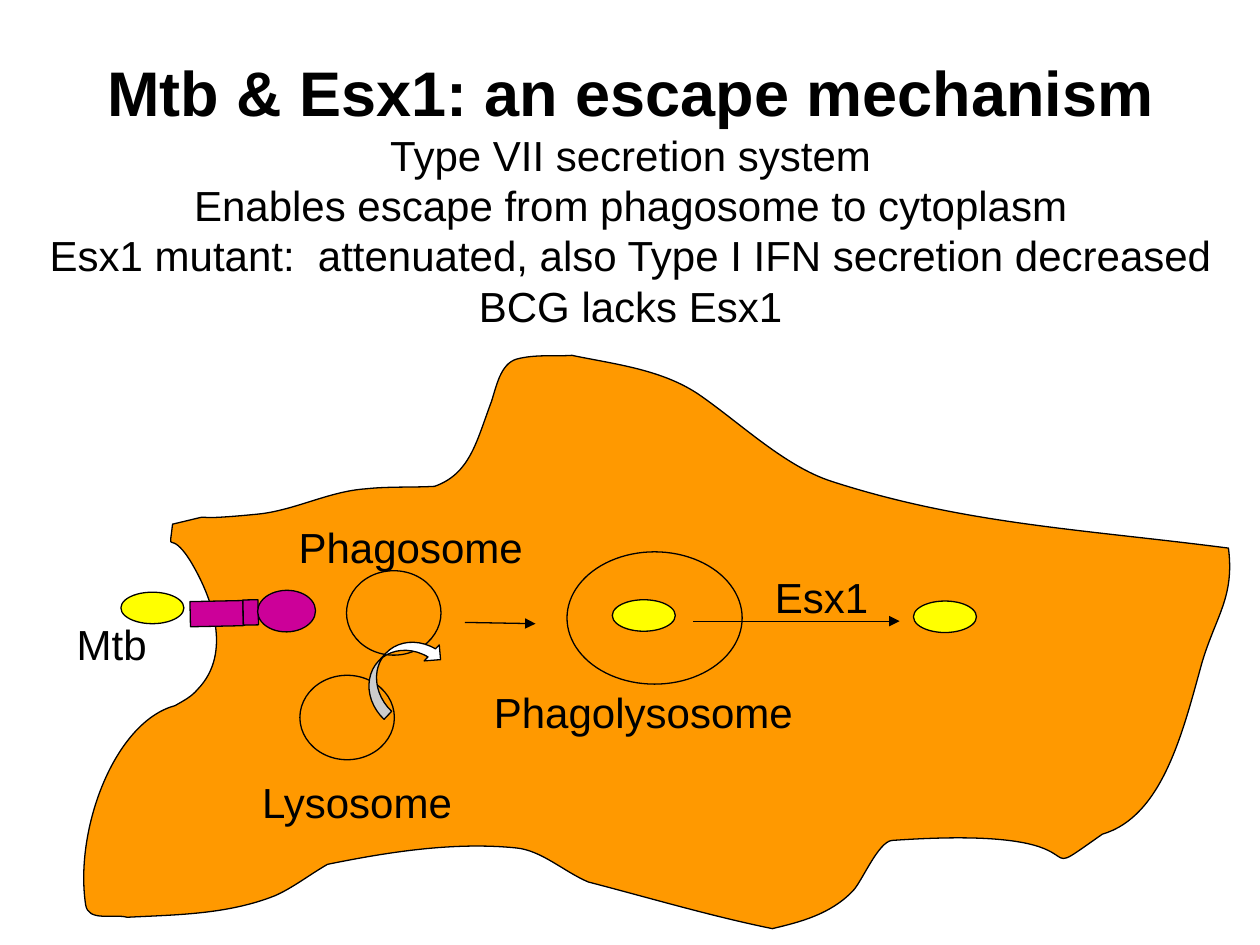
from lxml import etree
from pptx import Presentation
from pptx.dml.color import RGBColor
from pptx.enum.shapes import MSO_CONNECTOR, MSO_SHAPE
from pptx.enum.text import MSO_ANCHOR, MSO_AUTO_SIZE, PP_ALIGN
from pptx.oxml.ns import qn
from pptx.util import Inches, Pt

OVAL = MSO_SHAPE.OVAL
RECTANGLE = MSO_SHAPE.RECTANGLE
CURVED_ARROW = MSO_SHAPE.CURVED_RIGHT_ARROW
STRAIGHT = MSO_CONNECTOR.STRAIGHT
CENTER = PP_ALIGN.CENTER
MIDDLE = MSO_ANCHOR.MIDDLE
NO_AUTOFIT = MSO_AUTO_SIZE.NONE

FONT = "Arial"
COLORS = {
    "ink": "000000",
    "cell": "FF9900",
    "receptor": "CC0099",
    "bacterium": "FFFF00",
    "arrow": "FFFFFF",
}
LINE_WIDTH = Pt(0.75)
LABEL_INDENT = 0.37
BACTERIUM_SIZE = (0.5, 0.25)
VESICLE_SIZE = (0.75, 0.67)
RECEPTOR_ANGLE = 268.8

TITLE = "Mtb & Esx1: an escape mechanism"
SUBTITLES = [
    "Type VII secretion system",
    "Enables escape from phagosome to cytoplasm",
    "Esx1 mutant:  attenuated, also Type I IFN secretion decreased",
    "BCG lacks Esx1",
]

# Membrane outline relative to the cell's box: a start point, then
# Bezier segments (control, control, end).
CELL_START = (0.69, 1.35)
CELL_CURVES = [
    ((1.16, 1.24), (0.66, 1.34), (1.37, 1.27)),
    ((1.66, 1.24), (1.93, 1.09), (2.22, 1.07)),
    ((2.40, 1.05), (2.58, 1.06), (2.77, 1.05)),
    ((3.05, 0.95), (3.10, 0.70), (3.22, 0.38)),
    ((3.26, 0.26), (3.29, 0.08), (3.42, 0.04)),
    ((3.57, 0.00), (3.72, 0.02), (3.86, 0.01)),
    ((4.19, 0.08), (4.58, 0.12), (4.88, 0.33)),
    ((5.21, 0.56), (5.55, 0.89), (5.92, 1.01)),
    ((6.97, 1.35), (7.91, 1.39), (9.07, 1.54)),
    ((9.12, 1.93), (8.97, 2.08), (8.86, 2.45)),
    ((8.71, 2.99), (8.55, 3.67), (8.07, 3.81)),
    ((7.40, 4.28), (8.26, 3.73), (6.40, 3.86)),
    ((6.29, 3.87), (6.16, 4.19), (6.09, 4.26)),
    ((5.91, 4.45), (5.66, 4.51), (5.45, 4.56)),
    ((4.96, 4.46), (4.49, 4.32), (3.99, 4.19)),
    ((3.80, 4.11), (3.62, 3.94), (3.42, 3.92)),
    ((2.93, 3.87), (2.41, 3.95), (1.92, 4.05)),
    ((1.78, 4.13), (1.64, 4.24), (1.50, 4.30)),
    ((1.12, 4.45), (0.71, 4.45), (0.33, 4.47)),
    ((0.22, 4.44), (0.02, 4.51), (0.00, 4.37)),
    ((-0.09, 3.77), (0.23, 2.92), (0.71, 2.79)),
    ((0.78, 2.75), (0.84, 2.72), (0.89, 2.66)),
    ((1.17, 2.37), (1.00, 1.92), (0.83, 1.64)),
    ((0.66, 1.37), (0.66, 1.62), (0.69, 1.35)),
]


def rgb(name):
    return RGBColor.from_string(COLORS[name])


def style_shape(shape, fill):
    shape.shadow.inherit = False
    if fill:
        shape.fill.solid()
        shape.fill.fore_color.rgb = rgb(fill)
    else:
        shape.fill.background()
    shape.line.color.rgb = rgb("ink")
    shape.line.width = LINE_WIDTH


def add_preset(slide, kind, left, top, size, fill=None, rotation=0):
    shape = slide.shapes.add_shape(
        kind, Inches(left), Inches(top), Inches(size[0]), Inches(size[1]))
    style_shape(shape, fill)
    shape.rotation = rotation
    return shape


def style_paragraph(paragraph, size, bold=False):
    font = paragraph.font
    font.name, font.size, font.bold = FONT, Pt(size), bold
    font.color.rgb = rgb("ink")


def add_label(slide, text, left, top, width, indent=LABEL_INDENT):
    box = slide.shapes.add_textbox(
        Inches(left), Inches(top), Inches(width), Inches(0.5))
    frame = box.text_frame
    frame.word_wrap = True
    frame.margin_left = Inches(0.1 + indent)
    frame.text = text
    style_paragraph(frame.paragraphs[0], 24)


def add_arrow(slide, start, end):
    arrow = slide.shapes.add_connector(
        STRAIGHT, *(Inches(value) for value in start + end))
    arrow.line.color.rgb = rgb("ink")
    arrow.line.width = LINE_WIDTH
    line = arrow._element.spPr.find(qn("a:ln"))
    etree.SubElement(line, qn("a:tailEnd"), type="triangle")
    etree.SubElement(arrow._element.spPr, qn("a:effectLst"))


def add_bacterium(slide, left, top):
    add_preset(slide, OVAL, left, top, BACTERIUM_SIZE, "bacterium")


def add_heading(slide, left, top, width, height):
    title = slide.shapes.title
    title.left, title.top = Inches(left), Inches(top)
    title.width, title.height = Inches(width), Inches(height)
    frame = title.text_frame
    frame.text = "\n".join([TITLE] + SUBTITLES)
    frame.word_wrap = True
    frame.auto_size = NO_AUTOFIT
    frame.vertical_anchor = MIDDLE
    for index, paragraph in enumerate(frame.paragraphs):
        paragraph.alignment = CENTER
        style_paragraph(paragraph, 24 if index else 36, bold=index == 0)


def add_cell(slide, left, top):
    """Freeform through the segment ends, with each side bent into a Bezier."""
    def place(point):
        return Inches(left + point[0]), Inches(top + point[1])

    builder = slide.shapes.build_freeform(*place(CELL_START))
    builder.add_line_segments([place(curve[-1]) for curve in CELL_CURVES], close=True)
    cell = builder.convert_to_shape()
    style_shape(cell, "cell")
    sides = list(cell._element.iter(qn("a:lnTo")))
    for side, curve in zip(sides, CELL_CURVES):
        bezier = etree.Element(qn("a:cubicBezTo"))
        for x, y in map(place, curve):
            etree.SubElement(bezier, qn("a:pt"), x=str(x - cell.left), y=str(y - cell.top))
        side.getparent().replace(side, bezier)


def add_uptake(slide, left, top):
    """Mtb meeting the receptor at the cell membrane."""
    for kind, x, y, size in (
        (RECTANGLE, 1.11, 0.04, (0.2, 0.42)),
        (RECTANGLE, 1.38, 0.18, (0.2, 0.12)),
        (OVAL, 1.6, 0, (0.33, 0.46)),
    ):
        add_preset(slide, kind, left + x, top + y, size, "receptor", RECEPTOR_ANGLE)
    add_label(slide, "Mtb", left, top + 0.24, 0.92, indent=0)
    add_bacterium(slide, left + 0.45, top + 0.08)


def add_fusion(slide, left, top):
    """Lysosome merging with the phagosome."""
    add_preset(slide, OVAL, left + 1.14, top + 0.44, VESICLE_SIZE)
    add_label(slide, "Phagosome", left + 0.29, top, 2.38)
    add_preset(slide, OVAL, left + 0.77, top + 1.27, VESICLE_SIZE)
    add_label(slide, "Lysosome", left, top + 2.02, 2.38)
    add_arrow(slide, (left + 2.08, top + 0.85), (left + 2.64, top + 0.86))
    arrow = add_preset(slide, CURVED_ARROW, left + 1.39, top + 0.86,
                       (0.35, 0.74), "arrow", 223.4)
    arrow._element.spPr.find(qn("a:xfrm")).set("flipH", "1")


def add_escape(slide, left, top):
    """Phagolysosome, and Mtb leaving it for the cytoplasm."""
    add_preset(slide, OVAL, left + 1.05, top, (1.39, 1.05))
    add_label(slide, "Phagolysosome", left, top + 1.02, 3.07)
    add_bacterium(slide, left + 1.41, top + 0.38)
    add_arrow(slide, (left + 2.05, top + 0.55), (left + 3.69, top + 0.55))
    add_bacterium(slide, left + 3.8, top + 0.39)
    add_label(slide, "Esx1", left + 2.23, top + 0.11, 1.61)


def main():
    presentation = Presentation()
    presentation.slide_width, presentation.slide_height = Inches(10), Inches(7.5)
    slide = presentation.slides.add_slide(presentation.slide_layouts[5])
    add_heading(slide, 0.1, 0.25, 9.81, 2.55)
    add_cell(slide, 0.68, 2.81)
    add_uptake(slide, 0.51, 4.62)
    add_fusion(slide, 1.61, 4.09)
    add_escape(slide, 3.45, 4.38)
    presentation.save("out.pptx")


if __name__ == "__main__":
    main()
